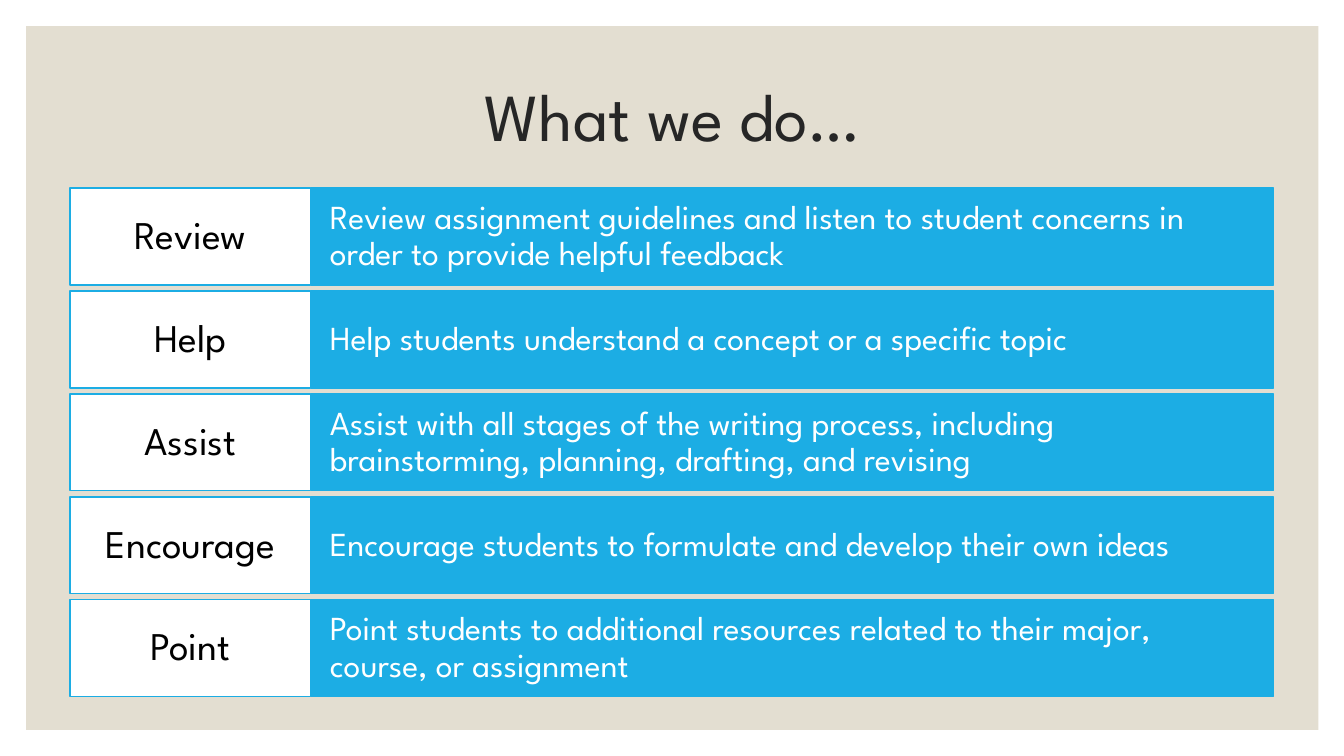
"""Build the "What we do" slide: five labelled service rows on a beige panel."""
from pptx import Presentation
from pptx.dml.color import RGBColor
from pptx.enum.shapes import MSO_SHAPE as Shape
from pptx.enum.text import MSO_ANCHOR as Anchor, MSO_AUTO_SIZE as AutoSize, PP_ALIGN as Align
from pptx.util import Pt

BEIGE = RGBColor(0xE3, 0xDE, 0xD1)
BLUE = RGBColor(0x1C, 0xAD, 0xE4)
WHITE = RGBColor(0xFF, 0xFF, 0xFF)
BLACK = RGBColor(0x00, 0x00, 0x00)
CHARCOAL = RGBColor(0x26, 0x26, 0x26)

TITLE_ONLY = 5
ROW_TOP, ROW_PITCH, ROW_HEIGHT = 134.4, 73.5, 69.2
LABEL_LEFT, LABEL_WIDTH, DETAIL_WIDTH = 50, 172, 687.5

SERVICES = [
    ("Review", "Review assignment guidelines and listen to student concerns in order to provide helpful feedback"),
    ("Help", "Help students understand a concept or a specific topic"),
    ("Assist", "Assist with all stages of the writing process, including brainstorming, planning, drafting, and revising"),
    ("Encourage", "Encourage students to formulate and develop their own ideas"),
    ("Point", "Point students to additional resources related to their major, course, or assignment"),
]


class SlideBuilder:
    font = "League Spartan"

    def __init__(self, page):
        self.page = page

    def add_text(self, box, text, size, color, align, inset):
        frame = box.text_frame
        frame.word_wrap = True
        frame.auto_size = AutoSize.NONE
        frame.vertical_anchor = Anchor.MIDDLE
        frame.margin_left = frame.margin_right = Pt(inset)
        para = frame.paragraphs[0]
        para.alignment = align
        para.line_spacing = 0.9
        span = para.add_run()
        span.text = text
        span.font.name = self.font
        span.font.size = Pt(size)
        span.font.color.rgb = color

    def title(self, text, left, top, width, height):
        box = self.page.shapes.title
        box.left, box.top, box.width, box.height = map(Pt, (left, top, width, height))
        self.add_text(box, text, 48, CHARCOAL, Align.CENTER, 7.2)

    def rectangle(self, left, top, width, height, fill, line=None):
        box = self.page.shapes.add_shape(Shape.RECTANGLE, *map(Pt, (left, top, width, height)))
        box.shadow.inherit = False
        box.fill.solid()
        box.fill.fore_color.rgb = fill
        if line is None:
            box.line.fill.background()
        else:
            box.line.color.rgb = line
            box.line.width = Pt(1)
        return box

    def panel(self, left, top, width, height):
        box = self.rectangle(left, top, width, height, BEIGE)
        self.page.shapes.title.element.addprevious(box.element)

    def service(self, top, label, detail):
        detail_left = LABEL_LEFT + LABEL_WIDTH
        detail_box = self.rectangle(detail_left, top, DETAIL_WIDTH, ROW_HEIGHT, BLUE, BLUE)
        self.add_text(detail_box, detail, 24, WHITE, Align.LEFT, 13.6)
        label_box = self.rectangle(LABEL_LEFT, top, LABEL_WIDTH, ROW_HEIGHT, WHITE, BLUE)
        self.add_text(label_box, label, 28, BLACK, Align.CENTER, 9)


def main():
    deck = Presentation()
    deck.slide_width, deck.slide_height = Pt(960), Pt(540)
    builder = SlideBuilder(deck.slides.add_slide(deck.slide_layouts[TITLE_ONLY]))
    builder.panel(18.7, 18.7, 923, 502.6)
    builder.title("What we do…", 84, 50.4, 792, 70.5)
    for row, (label, detail) in enumerate(SERVICES):
        builder.service(ROW_TOP + row * ROW_PITCH, label, detail)
    deck.save("out.pptx")


if __name__ == "__main__":
    main()
